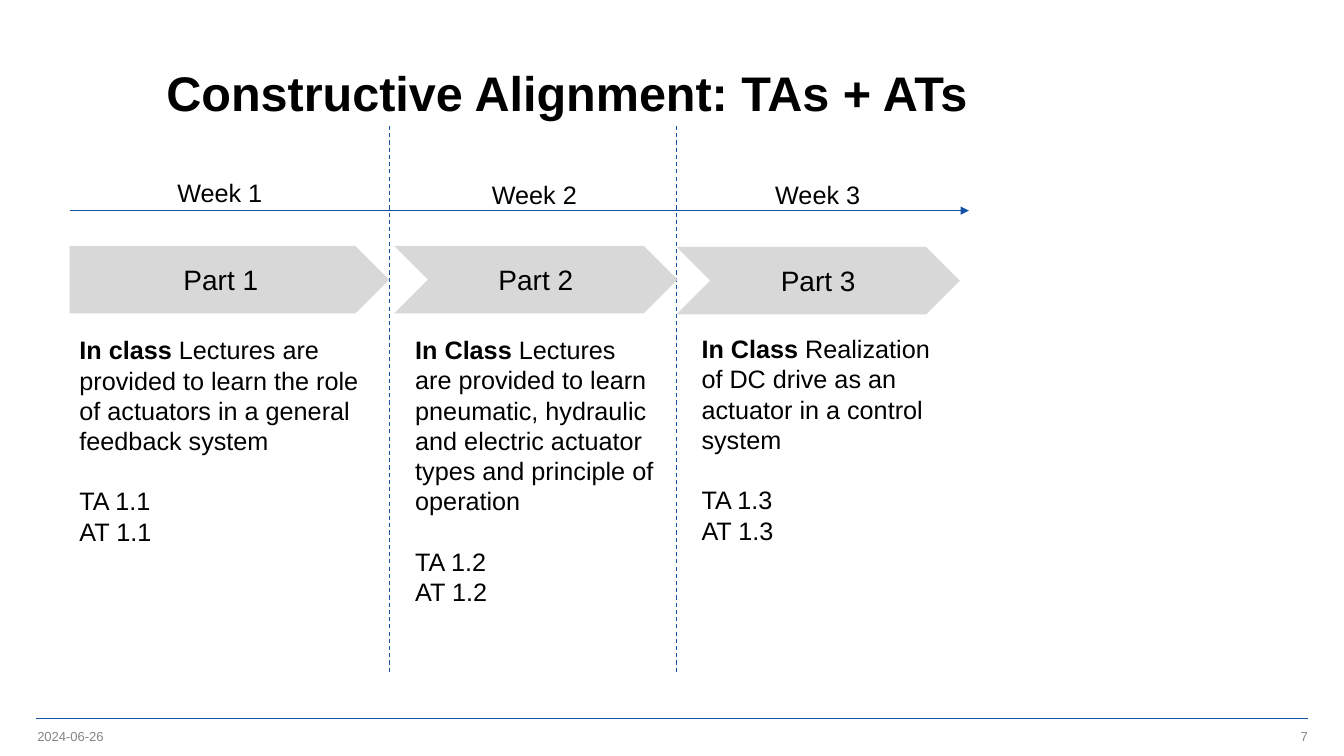
from lxml import etree
from pptx import Presentation
from pptx.dml.color import RGBColor
from pptx.enum.dml import MSO_LINE
from pptx.enum.shapes import MSO_CONNECTOR, MSO_SHAPE
from pptx.enum.text import MSO_ANCHOR, PP_ALIGN
from pptx.oxml.ns import qn
from pptx.util import Inches, Pt


def write(sp, paragraphs, size, color="000000", align=PP_ALIGN.LEFT, anchor=MSO_ANCHOR.TOP):
    tf = sp.text_frame
    tf.word_wrap = True
    tf.vertical_anchor = anchor
    for i, runs in enumerate(paragraphs):
        p = tf.paragraphs[0] if i == 0 else tf.add_paragraph()
        p.alignment = align
        for text, bold in runs:
            r = p.add_run()
            r.text = text
            r.font.name = "Arial"
            r.font.size = Pt(size)
            r.font.bold = bold
            r.font.color.rgb = RGBColor.from_string(color)
    return tf


def add_line(x1, y1, x2, y2, color, width):
    c = s.shapes.add_connector(MSO_CONNECTOR.STRAIGHT, Inches(x1), Inches(y1), Inches(x2), Inches(y2))
    c.line.color.rgb = RGBColor.from_string(color)
    c.line.width = Pt(width)
    etree.SubElement(c._element.spPr, qn("a:effectLst"))
    return c


prs = Presentation()
prs.slide_width, prs.slide_height = Inches(13.33), Inches(7.5)
s = prs.slides.add_slide(prs.slide_layouts[5])
for layout_sp in list(s.slide_layout.placeholders):
    if layout_sp.placeholder_format.type != 1:
        layout_sp._element.getparent().remove(layout_sp._element)

add_line(0.36, 7.13, 12.97, 7.13, "1954A6", 1)

title = s.shapes.title
title.left, title.top, title.width, title.height = Inches(1.55), Inches(0.37), Inches(11.01), Inches(0.98)
tf = write(title, [[("Constructive Alignment: TAs + ATs", True)]], 34.7, anchor=MSO_ANCHOR.MIDDLE)
tf.paragraphs[0].line_spacing = 1.18

for x, text, align in [(0.37, "2024-06-26", PP_ALIGN.LEFT), (9.97, "7", PP_ALIGN.RIGHT)]:
    sp = s.shapes.add_textbox(Inches(x), Inches(7.22), Inches(3), Inches(0.17))
    tf = write(sp, [[(text, False)]], 9.3, "848489", align, MSO_ANCHOR.MIDDLE)
    tf.margin_left = tf.margin_right = tf.margin_top = tf.margin_bottom = 0

timeline = add_line(0.69, 2.09, 9.61, 2.09, "1451A5", 0.75)
etree.SubElement(timeline.line._get_or_add_ln(), qn("a:tailEnd"), type="triangle")
for x in (3.86, 6.71):
    add_line(x, 1.25, x, 6.67, "1451A5", 0.75).line.dash_style = MSO_LINE.DASH

parts = [
    (MSO_SHAPE.PENTAGON, 0.69, 2.44, 3.17, 1.66, 1.71, 0.69, 3.27, 3, 2.22,
     [[("In class", True),
       (" Lectures are provided to learn the role of actuators in a general feedback system", False)]]),
    (MSO_SHAPE.CHEVRON, 3.91, 2.44, 2.81, 4.78, 1.73, 4.02, 3.27, 2.6, 2.83,
     [[("In Class ", True),
       ("Lectures are provided to learn pneumatic, hydraulic and electric actuator types "
        "and principle of operation", False)]]),
    (MSO_SHAPE.CHEVRON, 6.71, 2.45, 2.81, 7.59, 1.73, 6.86, 3.26, 3, 2.22,
     [[("In Class", True), (" Realization", False)],
      [("of DC drive as an actuator in a control system", False)]]),
]
for n, (kind, x, y, w, week_x, week_y, body_x, body_y, body_w, body_h, body) in enumerate(parts, 1):
    arrow = s.shapes.add_shape(kind, Inches(x), Inches(y), Inches(w), Inches(0.67))
    arrow.shadow.inherit = False
    arrow.fill.solid()
    arrow.fill.fore_color.rgb = RGBColor.from_string("D8D8D8")
    arrow.line.fill.background()
    write(arrow, [[(f"Part {n}", False)]], 20, align=PP_ALIGN.CENTER, anchor=MSO_ANCHOR.MIDDLE)

    week = s.shapes.add_textbox(Inches(week_x), Inches(week_y), Inches(1.05), Inches(0.4))
    write(week, [[(f"Week {n}", False)]], 18)

    sp = s.shapes.add_textbox(Inches(body_x), Inches(body_y), Inches(body_w), Inches(body_h))
    codes = [[(f"{code} 1.{n}", False)] for code in ("TA", "AT")]
    tf = write(sp, body + codes, 18)
    tf.paragraphs[len(body)].space_before = Pt(21.6)

prs.save("out.pptx")
